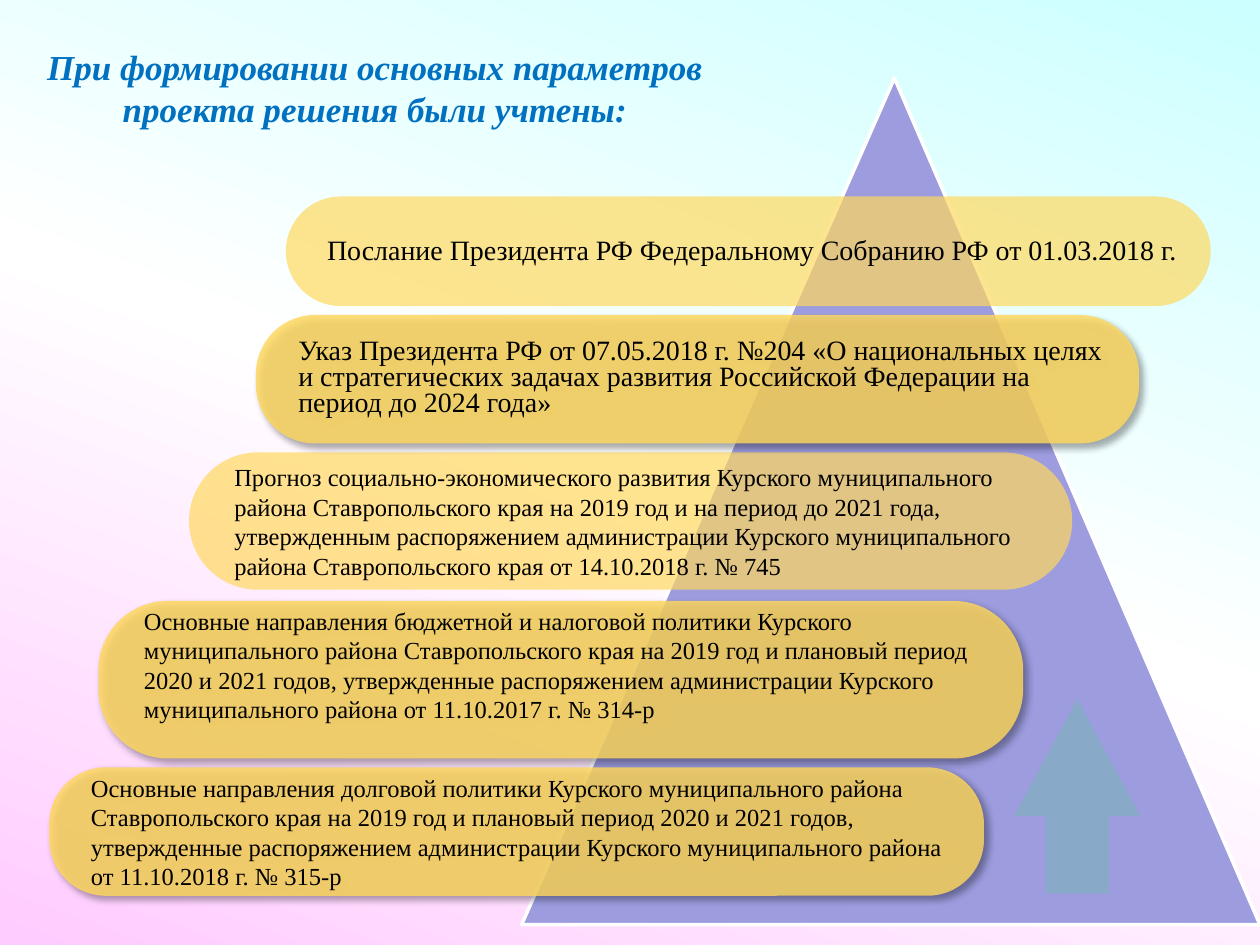
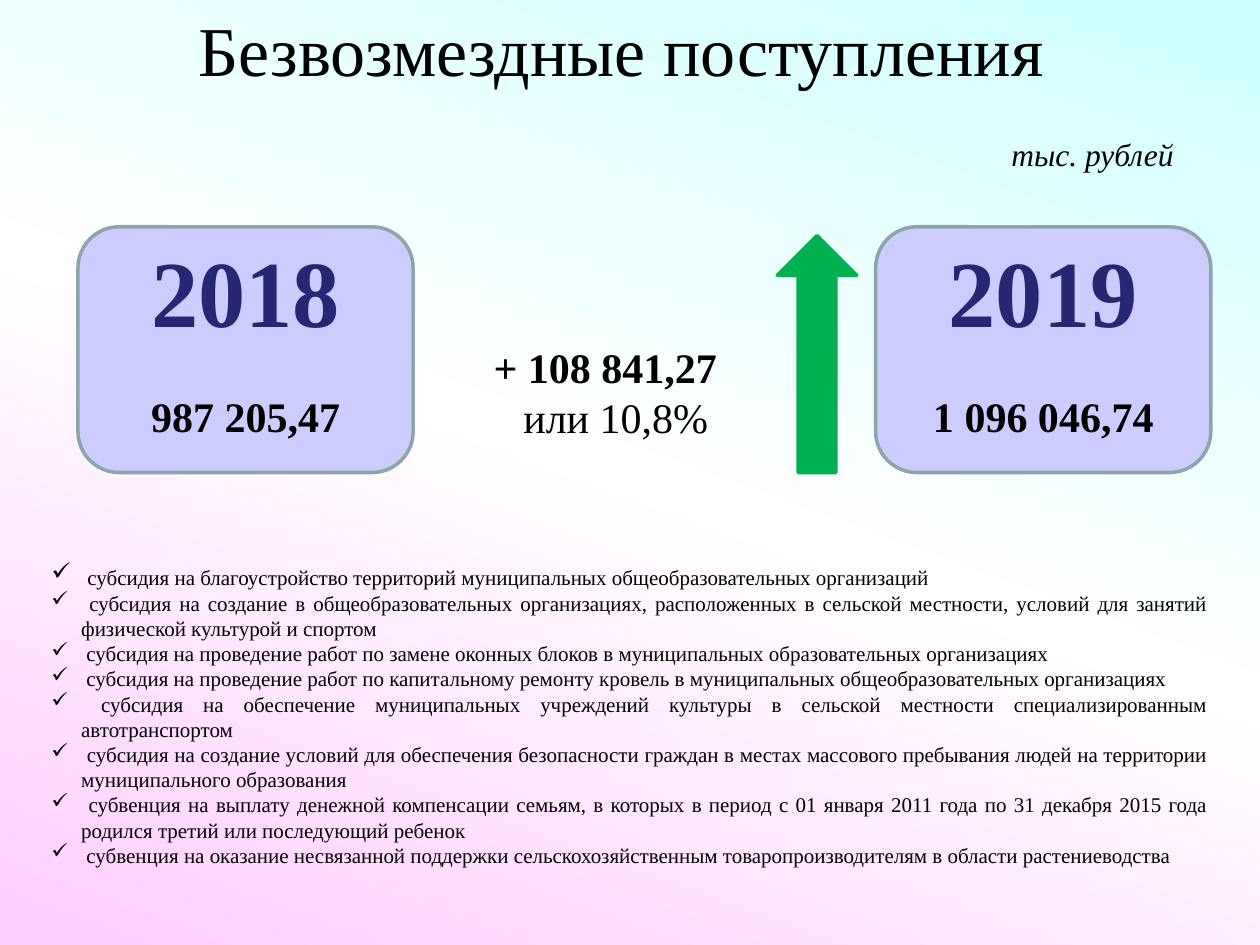
from pptx import Presentation
from pptx.dml.color import RGBColor
from pptx.enum.shapes import MSO_SHAPE
from pptx.enum.text import MSO_ANCHOR, PP_ALIGN
from pptx.oxml import parse_xml
from pptx.oxml.ns import nsdecls, qn
from pptx.util import Pt

TRIANGLE, UP_ARROW, ROUNDED = MSO_SHAPE.ISOSCELES_TRIANGLE, MSO_SHAPE.UP_ARROW, MSO_SHAPE.ROUNDED_RECTANGLE
LEFT, CENTER, JUSTIFY = PP_ALIGN.LEFT, PP_ALIGN.CENTER, PP_ALIGN.JUSTIFY
TOP, MIDDLE = MSO_ANCHOR.TOP, MSO_ANCHOR.MIDDLE

BLACK = RGBColor(0x00, 0x00, 0x00)
WHITE = RGBColor(0xFF, 0xFF, 0xFF)
SKY = RGBColor(0xCC, 0xFF, 0xFF)
PINK = RGBColor(0xFF, 0xCC, 0xFF)
BLUE = RGBColor(0x00, 0x70, 0xC0)
VIOLET = RGBColor(0x9C, 0x9C, 0xDF)
TEAL = RGBColor(0x75, 0xB7, 0xB1)
GOLD = RGBColor(0xFF, 0xD8, 0x5D)
LILAC = RGBColor(0xCC, 0xCC, 0xFF)
GREY = RGBColor(0x8A, 0xA6, 0xA8)
NAVY = RGBColor(0x26, 0x26, 0x73)
GREEN = RGBColor(0x00, 0xB0, 0x50)

# Bars of the pyramid: left, top, width, height, corner, raised, size, line spacing, bottom inset, text
BARS = [
    (108, 258.5, 504.7, 78.5, 0.5, False, 14, 17, 3.6,
     "Прогноз социально-экономического развития Курского муниципального района Ставропольского края "
     "на 2019 год и на период до 2021 года, утвержденным распоряжением администрации Курского "
     "муниципального района Ставропольского края от 14.10.2018 г. № 745"),
    (146.2, 180, 504.7, 73.4, 0.46, True, 16, 15, 3.6,
     "Указ Президента РФ от 07.05.2018 г. №204 «О национальных целях и стратегических задачах "
     "развития Российской Федерации на период до 2024 года»"),
    (163.4, 112.3, 528.5, 62.6, 0.5, False, 16, 17, 3.6,
     "Послание Президента РФ Федеральному Собранию РФ от 01.03.2018 г."),
    (56.2, 343.4, 528.5, 90, 0.44, True, 14, None, 20.6,
     "Основные направления бюджетной и налоговой политики Курского муниципального района "
     "Ставропольского края на 2019 год и плановый период 2020 и 2021 годов, утвержденные "
     "распоряжением администрации Курского муниципального района от 11.10.2017 г. № 314-р"),
    (28.1, 438.5, 534.2, 73.4, 0.44, True, 14, None, 3.6,
     "Основные направления долговой политики Курского муниципального района Ставропольского края "
     "на 2019 год и плановый период 2020 и 2021 годов, утвержденные распоряжением администрации "
     "Курского муниципального района от 11.10.2018 г. № 315-р"),
]

YEARS = [("2019", "1 096 046,74", 500.4), ("2018", "987 205,47", 44.6)]

GRANTS = [
    "субсидия на благоустройство территорий муниципальных общеобразовательных организаций",
    "субсидия на создание в общеобразовательных организациях, расположенных в сельской местности, "
    "условий для занятий физической культурой и спортом",
    "субсидия на проведение работ по замене оконных блоков в муниципальных образовательных организациях",
    "субсидия на проведение работ по капитальному ремонту кровель в муниципальных "
    "общеобразовательных организациях",
    "субсидия на обеспечение муниципальных учреждений культуры в сельской местности "
    "специализированным автотранспортом",
    "субсидия на создание условий для обеспечения безопасности граждан в местах массового "
    "пребывания людей на территории муниципального образования",
    "субвенция на выплату денежной компенсации семьям, в которых в период с 01 января 2011 года "
    "по 31 декабря 2015 года родился третий или последующий ребенок",
    "субвенция на оказание несвязанной поддержки сельскохозяйственным товаропроизводителям "
    "в области растениеводства",
]


class Deck:
    """Holds the shared style and the current page."""

    font = "Times New Roman"

    def __init__(self):
        self.deck = Presentation()
        self.deck.slide_width, self.deck.slide_height = Pt(720), Pt(540)
        self.page = None

    def new_page(self):
        self.page = self.deck.slides.add_slide(self.deck.slide_layouts[6])
        stops = "".join(f'<a:gs pos="{place}"><a:srgbClr val="{color}"/></a:gs>'
                        for place, color in ((0, SKY), (50000, WHITE), (100000, PINK)))
        self.page._element.cSld.insert(0, parse_xml(
            f'<p:bg {nsdecls("p", "a")}><p:bgPr><a:gradFill rotWithShape="1"><a:gsLst>{stops}</a:gsLst>'
            f'<a:lin ang="{110 * 60000}" scaled="0"/></a:gradFill><a:effectLst/></p:bgPr></p:bg>'))

    def shape(self, kind, left, top, width, height, fill, adjust=(), line=None, alpha=None, raised=False):
        shape = self.page.shapes.add_shape(kind, Pt(left), Pt(top), Pt(width), Pt(height))
        for index, value in enumerate(adjust):
            shape.adjustments[index] = value
        shape.fill.solid()
        shape.fill.fore_color.rgb = fill
        properties = shape._element.spPr
        if alpha:
            color = properties.find(qn("a:solidFill")).find(qn("a:srgbClr"))
            color.append(parse_xml(f'<a:alpha {nsdecls("a")} val="{alpha * 1000}"/>'))
        if line:
            shape.line.color.rgb = line
            shape.line.width = Pt(2)
        else:
            shape.line.fill.background()
        shape.shadow.inherit = False
        if raised:
            properties.find(qn("a:effectLst")).append(parse_xml(
                f'<a:outerShdw {nsdecls("a")} blurRad="{Pt(4)}" dist="{Pt(3)}" dir="{45 * 60000}" '
                f'rotWithShape="0"><a:srgbClr val="{BLACK}"><a:alpha val="40000"/></a:srgbClr></a:outerShdw>'))
        return shape

    def frame(self, box, anchor=TOP, insets=(7.2, 3.6, 7.2, 3.6), wrap=True):
        frame = box.text_frame
        frame.word_wrap = wrap
        frame.vertical_anchor = anchor
        frame.margin_left, frame.margin_top, frame.margin_right, frame.margin_bottom = map(Pt, insets)
        return frame

    def text_box(self, left, top, width, height, wrap=True):
        box = self.page.shapes.add_textbox(Pt(left), Pt(top), Pt(width), Pt(height))
        return self.frame(box, wrap=wrap)

    def para(self, frame, align=CENTER, spacing=None, before=0, indent=0, bullet=None):
        first = frame.paragraphs[0]
        para = frame.add_paragraph() if first.runs else first
        para.alignment = align
        para.space_before = Pt(before)
        if spacing:
            para.line_spacing = Pt(spacing)
        properties = para._p.get_or_add_pPr()
        if indent:
            properties.set("marL", str(Pt(indent)))
        if bullet:
            properties.set("indent", str(-Pt(indent)))
            properties.append(parse_xml(f'<a:buChar {nsdecls("a")} char="{bullet}"/>'))
        return para

    def span(self, para, text, size, color=BLACK, bold=False, italic=False):
        span = para.add_run()
        span.text = text
        font = span.font
        font.name, font.size, font.bold, font.italic = self.font, Pt(size), bold, italic
        font.color.rgb = color


def build_pyramid(deck):
    deck.new_page()
    deck.shape(TRIANGLE, 298.1, 44.6, 421.9, 483.8, VIOLET, [0.505], line=WHITE)
    deck.shape(UP_ARROW, 579.6, 399.6, 72, 110.9, TEAL, [0.5, 0.926], alpha=49)

    # Source documents
    for left, top, width, height, corner, raised, size, spacing, bottom, text in BARS:
        bar = deck.shape(ROUNDED, left, top, width, height, GOLD, [corner],
                         alpha=82 if raised else 69, raised=raised)
        frame = deck.frame(bar, MIDDLE, (14.4, 3.6, 5.76, bottom))
        deck.span(deck.para(frame, LEFT, spacing), text, size)

    # Title
    title = deck.text_box(0, 22.3, 433.4, 55.4)
    for text in ("При формировании основных параметров ", "проекта решения были учтены: "):
        deck.span(deck.para(title), text, 20, BLUE, bold=True, italic=True)


def build_receipts(deck):
    deck.new_page()
    # Year cards
    for year, amount, left in YEARS:
        deck.shape(ROUNDED, left, 129.6, 191.5, 140.4, LILAC, line=GREY)
        heading = deck.text_box(left + 33.8, 129.6, 123.8, 72.7, wrap=False)
        deck.span(deck.para(heading), year, 54, NAVY, bold=True)
        total = deck.text_box(left, 219.6, 191.5, 36)
        deck.span(deck.para(total), amount, 24, bold=True)

    # Title and list of grants
    body = deck.text_box(22.3, 0, 675.4, 525.6)
    deck.span(deck.para(body), "Безвозмездные поступления ", 40)
    for index, grant in enumerate(GRANTS):
        first = index == 0
        para = deck.para(body, JUSTIFY, before=269 if first else 0, indent=17, bullet="✓")
        deck.span(para, " ", 14 if first else 12)
        deck.span(para, grant, 12)

    # Growth
    growth = deck.text_box(264.2, 191.5, 163.4, 65.5)
    deck.span(deck.para(growth), "+ 108 841,27", 24, bold=True)
    deck.span(deck.para(growth, indent=12), "или 10,8%", 24)
    deck.shape(UP_ARROW, 444.2, 134.6, 45.4, 135.4, GREEN, [0.473, 0.5], line=GREEN)

    # Unit of measure
    unit = deck.text_box(556.6, 73.4, 135.4, 28.8)
    deck.span(deck.para(unit), "тыс. рублей", 18, italic=True)


def main():
    deck = Deck()
    build_pyramid(deck)
    build_receipts(deck)
    deck.deck.save("out.pptx")


if __name__ == "__main__":
    main()
